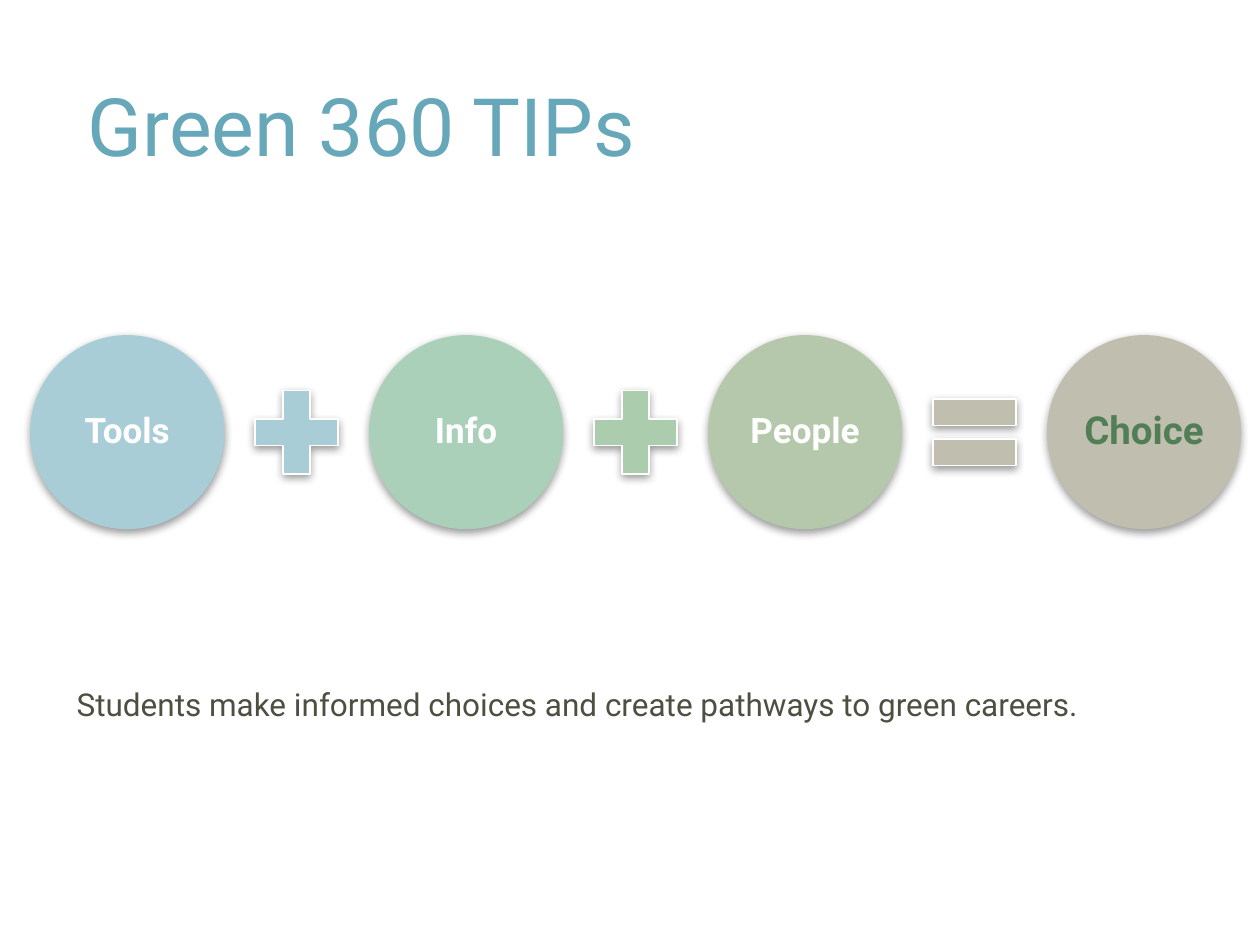
"""Build the Green 360 TIPs slide: an equation of circles with a title and a caption."""
import pptx
import pptx.dml.color
import pptx.enum.shapes
import pptx.enum.text
import pptx.oxml
import pptx.util

Inches = pptx.util.Inches
Pt = pptx.util.Pt
MSO_SHAPE = pptx.enum.shapes.MSO_SHAPE
ANCHOR = pptx.enum.text.MSO_ANCHOR

SHADOW = (
    '<a:outerShdw xmlns:a="http://schemas.openxmlformats.org/drawingml/2006/main" '
    'blurRad="63500" dist="25400" dir="5400000" rotWithShape="0">'
    '<a:srgbClr val="000000"><a:alpha val="40000"/></a:srgbClr></a:outerShdw>'
)


def color(value):
    return pptx.dml.color.RGBColor.from_string(value)


def write(shape, text, size, ink, anchor, bold=False):
    frame = shape.text_frame
    frame.word_wrap = True
    frame.vertical_anchor = anchor
    paragraph = frame.paragraphs[0]
    paragraph.text = text
    paragraph.font.name = "Roboto"
    paragraph.font.size = Pt(size)
    paragraph.font.bold = bold
    paragraph.font.color.rgb = color(ink)
    return paragraph


deck = pptx.Presentation()
deck.slide_width = Inches(10)
deck.slide_height = Inches(7.5)
slide = deck.slides.add_slide(deck.slide_layouts[6])

title = slide.shapes.add_textbox(Inches(0.6), Inches(0.12), Inches(8.8), Inches(1.3))
write(title, "Green 360 TIPs", 46, "66A7B9", ANCHOR.BOTTOM)

terms = [
    ("Tools", "A8CDD7", 20, "FFFFFF"),
    ("Info", "AAD0BA", 20, "FFFFFF"),
    ("People", "B6C8AC", 20, "FFFFFF"),
    ("Choice", "C0BEAF", 22, "527E56"),
]
operators = [
    (MSO_SHAPE.MATH_PLUS, "A8CDD7"),
    (MSO_SHAPE.MATH_PLUS, "ABCCAD"),
    (MSO_SHAPE.MATH_EQUAL, "C0BEAF"),
]
left, pitch, middle = 0.24, 2.69, 3.43
diameter, sign_size = 1.54, 0.9
sign_offset = (diameter + pitch - sign_size) / 2

equation = slide.shapes.add_group_shape()
for index, (label, fill, size, ink) in enumerate(terms):
    x = left + index * pitch
    circle = equation.shapes.add_shape(
        MSO_SHAPE.OVAL, Inches(x), Inches(middle - diameter / 2),
        Inches(diameter), Inches(diameter))
    circle.fill.solid()
    circle.fill.fore_color.rgb = color(fill)
    circle.line.fill.background()
    frame = circle.text_frame
    frame.margin_left = frame.margin_right = Inches(0.03)
    frame.margin_top = frame.margin_bottom = Inches(0.03)
    caption = write(circle, label, size, ink, ANCHOR.MIDDLE, bold=True)
    caption.alignment = pptx.enum.text.PP_ALIGN.CENTER
    caption.line_spacing = 0.9

    if index < len(operators):
        kind, sign_fill = operators[index]
        sign = equation.shapes.add_shape(
            kind, Inches(x + sign_offset), Inches(middle - sign_size / 2),
            Inches(sign_size), Inches(sign_size))
        sign.fill.solid()
        sign.fill.fore_color.rgb = color(sign_fill)
        sign.line.color.rgb = color("FFFFFF")
        sign.line.width = Pt(1)

for part in equation.shapes:
    part.shadow.inherit = False
    effects = part._element.spPr.find(pptx.oxml.ns.qn("a:effectLst"))
    effects.append(pptx.oxml.parse_xml(SHADOW))

summary = slide.shapes.add_textbox(Inches(0.51), Inches(5.39), Inches(9.35), Inches(0.4))
write(summary, "Students make informed choices and create pathways to green careers.",
      18, "4D5040", ANCHOR.TOP)
summary.text_frame.auto_size = pptx.enum.text.MSO_AUTO_SIZE.SHAPE_TO_FIT_TEXT

deck.save("out.pptx")
